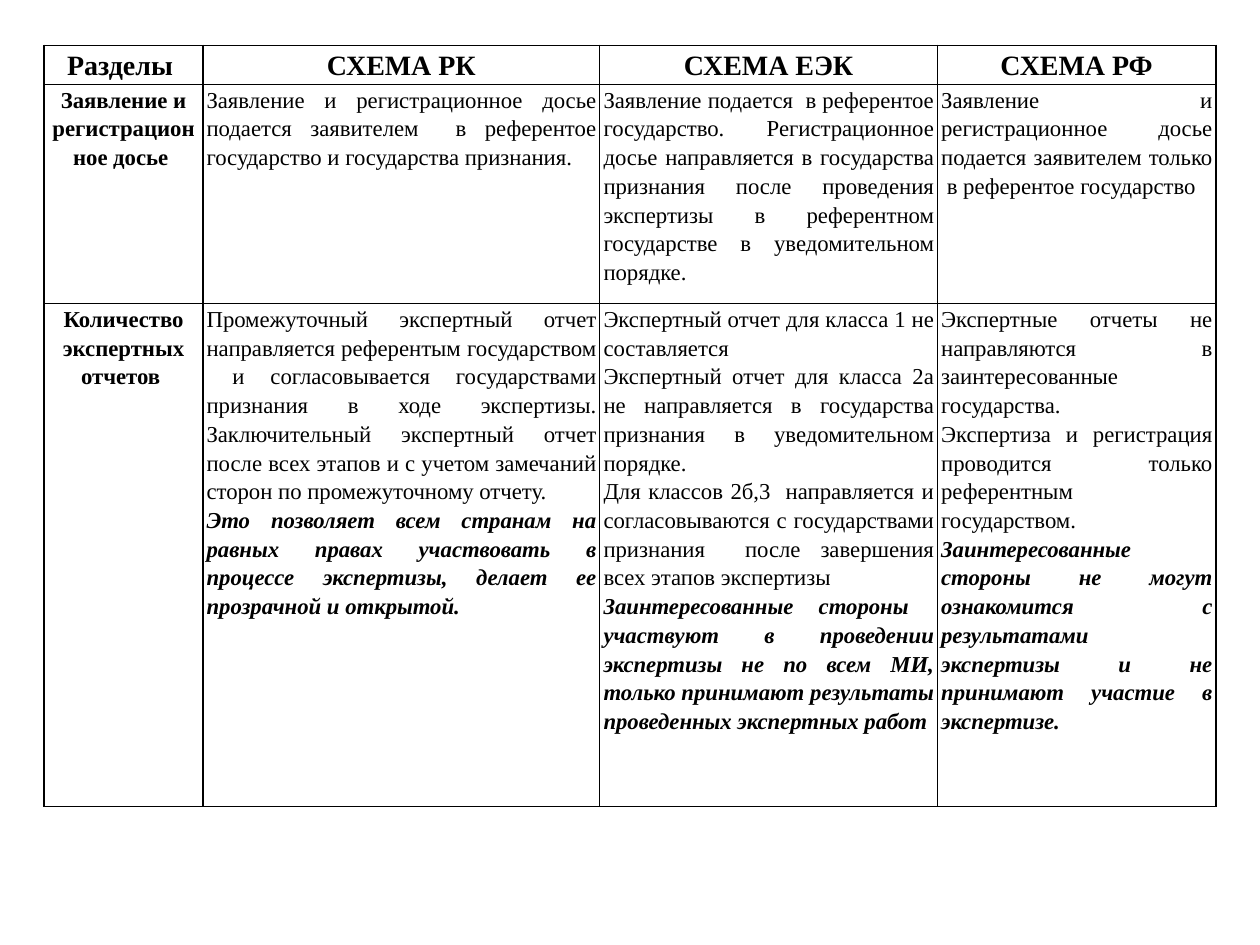
from lxml.etree import SubElement
from pptx import Presentation
from pptx.dml.color import RGBColor
from pptx.enum.text import PP_ALIGN
from pptx.oxml.ns import qn
from pptx.util import Inches, Pt

COLORS = {"text": "000000", "border": "000000"}
FONT = "Times New Roman"
COL_WIDTHS = [1.26, 3.15, 2.68, 2.21]
ROW_HEIGHTS = [0.31, 1.74, 3.99]

HEADERS = ["Разделы ", "СХЕМА РК", "СХЕМА ЕЭК", "СХЕМА РФ"]

# Each cell: plain paragraphs, then an optional emphasised conclusion
SECTIONS = [
    ("Заявление и регистрационное досье ", [
        (["Заявление и регистрационное досье подается заявителем  в референтое "
          "государство и государства признания."], None),
        (["Заявление подается  в референтое государство. Регистрационное досье "
          "направляется в государства признания после проведения экспертизы в "
          "референтном государстве в уведомительном порядке."], None),
        (["Заявление и регистрационное досье подается заявителем только  в "
          "референтое государство"], None),
    ]),
    ("Количество экспертных отчетов ", [
        (["Промежуточный экспертный отчет направляется референтым государством  и "
          "согласовывается государствами признания в ходе экспертизы. "
          "Заключительный экспертный отчет после всех этапов и с учетом замечаний "
          "сторон по промежуточному отчету. "],
         "Это позволяет всем странам на равных правах участвовать в процессе "
         "экспертизы, делает ее прозрачной и открытой. "),
        (["Экспертный отчет для класса 1 не составляется  ",
          "Экспертный отчет для класса 2а не направляется в государства признания "
          "в уведомительном порядке.",
          "Для классов 2б,3  направляется и согласовываются с государствами "
          "признания  после завершения всех этапов экспертизы "],
         "Заинтересованные стороны  участвуют в проведении экспертизы не по всем "
         "МИ, только принимают результаты проведенных экспертных работ "),
        (["Экспертные отчеты не направляются в заинтересованные государства.",
          "Экспертиза и регистрация проводится только референтным государством."],
         "Заинтересованные стороны не могут ознакомится с результатами экспертизы "
         "и не принимают участие в экспертизе."),
    ]),
]


def add_text(tf, text, first=True, size=13, bold=False, italic=False,
             align=PP_ALIGN.JUSTIFY):
    p = tf.paragraphs[0] if first else tf.add_paragraph()
    p.alignment = align
    p.line_spacing = 1.15
    r = p.add_run()
    r.text = text
    r.font.name = FONT
    r.font.size = Pt(size)
    r.font.bold = bold
    r.font.italic = italic
    r.font.color.rgb = RGBColor.from_string(COLORS["text"])


def format_cell(cell):
    cell.margin_left = cell.margin_right = Inches(0.03)
    cell.margin_top = cell.margin_bottom = 0
    tcPr = cell._tc.get_or_add_tcPr()
    for side in ("a:lnL", "a:lnR", "a:lnT", "a:lnB"):
        ln = SubElement(tcPr, qn(side), w=str(Pt(1)))
        fill = SubElement(ln, qn("a:solidFill"))
        SubElement(fill, qn("a:srgbClr"), val=COLORS["border"])
    cell.fill.background()


def add_grid(s):
    table = s.shapes.add_table(
        len(ROW_HEIGHTS), len(COL_WIDTHS), Inches(0.35), Inches(0.36),
        Inches(sum(COL_WIDTHS)), Inches(sum(ROW_HEIGHTS))).table
    table.horz_banding = False
    table.first_row = False
    for column, width in zip(table.columns, COL_WIDTHS):
        column.width = Inches(width)
    for row, height in zip(table.rows, ROW_HEIGHTS):
        row.height = Inches(height)
    for cell in table.iter_cells():
        format_cell(cell)
    return table


def fill_body_cell(cell, paragraphs, conclusion):
    tf = cell.text_frame
    for i, text in enumerate(paragraphs):
        add_text(tf, text, first=i == 0)
    if conclusion:
        add_text(tf, conclusion, first=False, bold=True, italic=True)


def main():
    prs = Presentation()
    prs.slide_width, prs.slide_height = Inches(10), Inches(7.5)
    s = prs.slides.add_slide(prs.slide_layouts[6])
    table = add_grid(s)

    # Header row
    for col, text in enumerate(HEADERS):
        add_text(table.cell(0, col).text_frame, text, size=16, bold=True,
                 align=PP_ALIGN.CENTER)

    # Section rows
    for row, (name, cells) in enumerate(SECTIONS, start=1):
        add_text(table.cell(row, 0).text_frame, name, bold=True,
                 align=PP_ALIGN.CENTER)
        for col, (paragraphs, conclusion) in enumerate(cells, start=1):
            fill_body_cell(table.cell(row, col), paragraphs, conclusion)

    prs.save("out.pptx")


if __name__ == "__main__":
    main()
